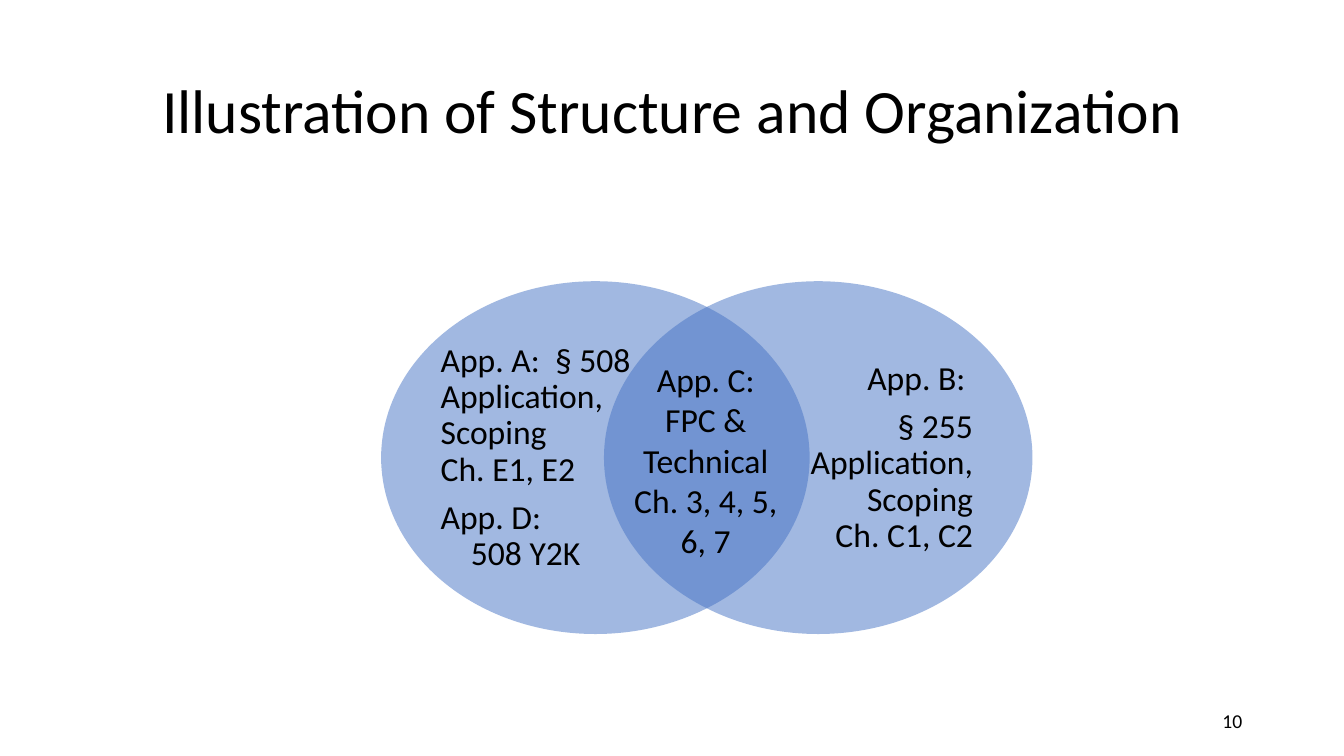
"""Build the Venn slide on structure and organization."""
from dataclasses import dataclass

import pptx
import pptx.dml.color
import pptx.enum.shapes
import pptx.enum.text
import pptx.oxml
import pptx.oxml.ns
import pptx.util

Inches = pptx.util.Inches
Pt = pptx.util.Pt
Align = pptx.enum.text.PP_ALIGN
Anchor = pptx.enum.text.MSO_ANCHOR


@dataclass
class Para:
    lines: list[str]
    after: float = 0
    indent: float = 0


@dataclass
class Label:
    box: tuple[float, float, float, float]
    paras: list[Para]
    align: Align
    size: float = 24
    spacing: float = 1.0
    anchor: Anchor = Anchor.MIDDLE
    inset: tuple[float, float] = (0.1, 0.05)


def rgb(color: str) -> pptx.dml.color.RGBColor:
    return pptx.dml.color.RGBColor.from_string(color)


def add_circle(s: pptx.slide.Slide, left: float) -> None:
    sp = s.shapes.add_shape(
        pptx.enum.shapes.MSO_SHAPE.OVAL,
        Inches(left), Inches(2.79), Inches(4.25), Inches(3.5))
    sp.shadow.inherit = False
    sp.line.fill.background()
    sp.fill.solid()
    sp.fill.fore_color.rgb = rgb("4472C4")
    clr = sp.fill._xPr.find(".//" + pptx.oxml.ns.qn("a:srgbClr"))
    clr.append(pptx.oxml.parse_xml(
        f'<a:alpha {pptx.oxml.ns.nsdecls("a")} val="50000"/>'))


def add_label(s: pptx.slide.Slide, label: Label) -> None:
    tf = s.shapes.add_textbox(*map(Inches, label.box)).text_frame
    tf.word_wrap = True
    tf.vertical_anchor = label.anchor
    tf.margin_left = tf.margin_right = Inches(label.inset[0])
    tf.margin_top = tf.margin_bottom = Inches(label.inset[1])
    for i, para in enumerate(label.paras):
        p = tf.add_paragraph() if i else tf.paragraphs[0]
        p.alignment = label.align
        p.line_spacing = label.spacing
        p.space_after = Pt(para.after)
        if para.indent:
            p._p.get_or_add_pPr().set("marL", str(Inches(para.indent)))
        for j, line in enumerate(para.lines):
            if j:
                p.add_line_break()
            r = p.add_run()
            r.text = line
            r.font.name = "Calibri"
            r.font.size = Pt(label.size)
            r.font.color.rgb = rgb("000000")


HEADINGS = [
    Label((0.92, 0.4, 11.5, 1.45),
          [Para(["Illustration of Structure and Organization"])],
          Align.CENTER, size=44, spacing=0.9),
    Label((9.42, 6.95, 3, 0.4), [Para(["10"])], Align.RIGHT, size=14),
]
SECTIONS = [
    Label((4.37, 3.21, 2.45, 2.67),
          [Para(["App. A:  § 508", "Application,", "Scoping", "Ch. E1, E2"], 8.4),
           Para(["App. D:"]),
           Para(["508 Y2K"], 8.4, indent=0.3)],
          Align.LEFT, spacing=0.9, inset=(0, 0)),
    Label((7.2, 3.21, 2.45, 2.67),
          [Para(["App. B: "], 8.4),
           Para(["§ 255", "Application,", "Scoping", "Ch. C1, C2"], 8.4)],
          Align.RIGHT, spacing=0.9, inset=(0, 0)),
    Label((6.02, 3.51, 1.96, 2.12),
          [Para(["App. C:"]),
           Para(["FPC & Technical", "Ch. 3, 4, 5,", "6, 7"])],
          Align.CENTER, anchor=Anchor.TOP),
]


def main() -> None:
    prs = pptx.Presentation()
    prs.slide_width, prs.slide_height = Inches(13.33), Inches(7.5)
    s = prs.slides.add_slide(prs.slide_layouts[6])
    for label in HEADINGS:
        add_label(s, label)
    for left in (3.78, 5.99):
        add_circle(s, left)
    for label in SECTIONS:
        add_label(s, label)
    prs.save("out.pptx")


if __name__ == "__main__":
    main()
